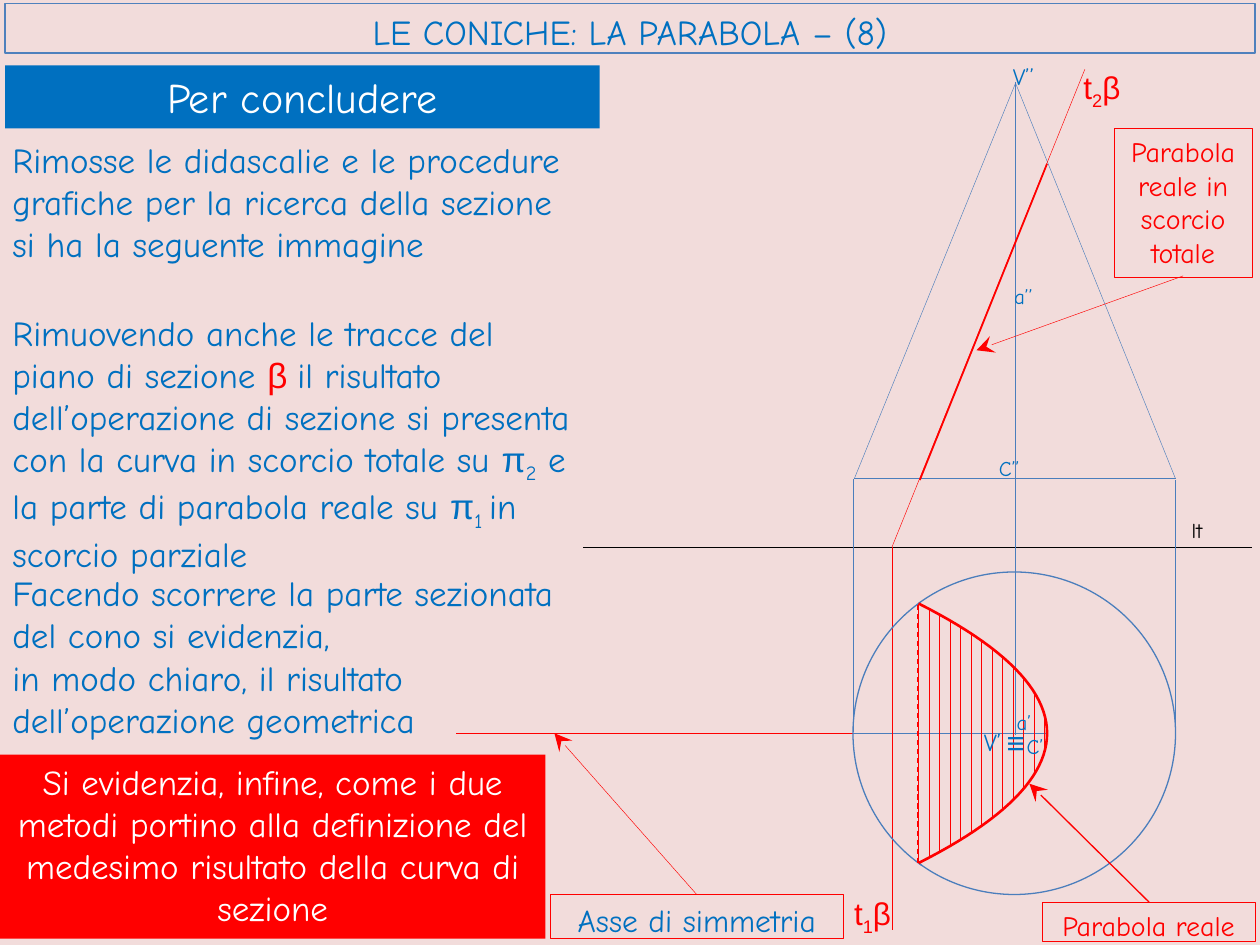
"""Build the closing slide on the parabola as a section of a cone."""
from math import sqrt

from lxml import etree
from pptx import Presentation
from pptx.dml.color import RGBColor
from pptx.enum import dml, shapes, text
from pptx.oxml import ns
from pptx.util import Inches, Pt

COLORS = {"background": "F2DCDB", "border": "4F81BD", "cone": "4B7EBC", "blue": "0070C0",
          "red": "FF0000", "black": "000000", "white": "FFFFFF"}
COMIC, ARIAL = "Comic Neue", "Arial"
APEX_X, AXIS_Y = 8.31, 5.82
CHORD_X, HALF_CHORD = 7.29, 1.03


def color(name):
    return RGBColor.from_string(COLORS[name])


def half_width(x):
    return HALF_CHORD * sqrt((APEX_X - x) / (APEX_X - CHORD_X))


def set_outline(shape, name, width):
    shape.line.color.rgb = color(name)
    shape.line.width = Pt(width)


def write(shape, paragraphs, size, align=None, anchor=text.MSO_ANCHOR.TOP):
    """Each paragraph is a list of (words, font, colour[, baseline]) runs."""
    frame = shape.text_frame
    frame.word_wrap = True
    frame.vertical_anchor = anchor
    for index, runs in enumerate(paragraphs):
        paragraph = frame.add_paragraph() if index else frame.paragraphs[0]
        paragraph.alignment = align or text.PP_ALIGN.LEFT
        for words, font, name, *baseline in runs:
            run = paragraph.add_run()
            run.text = words
            run.font.name = font
            run.font.size = Pt(size)
            run.font.color.rgb = color(name)
            if baseline:
                run.font._element.set("baseline", str(baseline[0]))


def add_text(slide, box, paragraphs, size, anchor=text.MSO_ANCHOR.TOP):
    words = slide.shapes.add_textbox(*map(Inches, box))
    write(words, paragraphs, size, anchor=anchor)
    return words


def add_label(slide, box, runs, size=12, anchor=text.MSO_ANCHOR.TOP):
    label = add_text(slide, box, [runs], size, anchor)
    label.text_frame.margin_right = 0


def add_panel(slide, box, words, size, ink, fill=None):
    panel = slide.shapes.add_shape(shapes.MSO_SHAPE.RECTANGLE, *map(Inches, box))
    panel.shadow.inherit = False
    if fill:
        panel.fill.solid()
        panel.fill.fore_color.rgb = color(fill)
        panel.line.fill.background()
    else:
        panel.fill.background()
        set_outline(panel, "red", 0.25)
    write(panel, [[(words, COMIC, ink)]], size, text.PP_ALIGN.CENTER)


def add_line(slide, start, end, name="cone", width=0.25, arrow=False, dashed=False):
    line = slide.shapes.add_connector(
        shapes.MSO_CONNECTOR.STRAIGHT, *map(Inches, (*start, *end)))
    set_outline(line, name, width)
    if dashed:
        line.line.dash_style = dml.MSO_LINE.DASH
    if arrow:
        tail = etree.SubElement(line.line._get_or_add_ln(), ns.qn("a:tailEnd"))
        tail.set("type", "stealth")
        tail.set("w", "lg")
        tail.set("len", "lg")
    etree.SubElement(line._element.spPr, ns.qn("a:effectLst"))


def add_arc(slide, box, start, end):
    arc = slide.shapes.add_shape(shapes.MSO_SHAPE.ARC, *map(Inches, box))
    arc.shadow.inherit = False
    arc.adjustments[0] = start
    arc.adjustments[1] = end
    arc.fill.background()
    set_outline(arc, "cone", 0.75)


def add_parabola(slide, steps=24):
    points = []
    for step in range(-steps, steps + 1):
        t = step / steps
        x = APEX_X - (APEX_X - CHORD_X) * t * t
        points.append((Inches(x), Inches(AXIS_Y + HALF_CHORD * t)))
    builder = slide.shapes.build_freeform(*points[0])
    builder.add_line_segments(points[1:], close=False)
    curve = builder.convert_to_shape()
    curve.shadow.inherit = False
    curve.fill.background()
    set_outline(curve, "red", 1.5)


def add_hatching(slide, count=13):
    for index in range(count):
        x = CHORD_X + index / (count - 1)
        half = half_width(x)
        add_line(slide, (x, AXIS_Y - half), (x, AXIS_Y + half), "red", 0.25 if index else 1)


def add_projections(slide):
    add_line(slide, (4.63, 4.34), (9.94, 4.34), "black")
    for start, end in (((9.33, 5.83), (9.33, 3.81)), ((6.77, 5.81), (6.77, 3.8)),
                       ((8.06, 0.66), (9.33, 3.8)), ((8.06, 0.66), (6.78, 3.8)),
                       ((8.06, 0.65), (8.06, 5.83)), ((6.77, AXIS_Y), (8.32, AXIS_Y))):
        add_line(slide, start, end)
    add_line(slide, (6.78, 3.8), (9.33, 3.8), width=0.5)
    add_line(slide, (3.62, AXIS_Y), (6.77, AXIS_Y), "red")
    add_line(slide, (8.61, 0.55), (7.08, 4.34), "red")
    add_line(slide, (7.08, 4.34), (7.08, 7.38), "red")
    add_line(slide, (8.31, 1.3), (7.3, 3.81), "red", 1)
    add_arc(slide, (6.77, 4.54, 2.56, 2.56), 140.22, 75.71)
    add_arc(slide, (6.77, 4.54, 2.56, 2.56), 75.12, 140.66)
    add_hatching(slide)
    add_line(slide, (7.28, 4.8), (7.28, 6.87), "red", 0.75, dashed=True)
    add_parabola(slide)


def add_labels(slide):
    for words, box, name in (("C’’", (7.83, 3.57, 0.52, 0.3), "blue"),
                             ("C’", (8.05, 5.77, 0.35, 0.28), "blue"),
                             ("lt", (9.36, 4.06, 0.38, 0.3), "black"),
                             ("a’’", (7.95, 2.2, 0.38, 0.3), "blue"),
                             ("a’", (7.97, 5.58, 0.38, 0.3), "blue")):
        add_label(slide, box, [(words, COMIC, name)])
    add_label(slide, (7.94, 0.44, 0.52, 0.35), [("V’’", COMIC, "blue")], 13.5)
    middle = text.MSO_ANCHOR.MIDDLE
    add_label(slide, (7.71, 5.81, 0.39, 0.16), [("V’", COMIC, "blue")], 14, middle)
    add_label(slide, (7.89, 5.81, 0.24, 0.16), [("≡", ARIAL, "blue")], 18, middle)
    for number, left, top in (("2", 8.5, 0.49), ("1", 6.68, 7.05)):
        add_label(slide, (left, top, 0.55, 0.4),
                  [("t", ARIAL, "red"), (number, ARIAL, "red", -25000), ("β", ARIAL, "red")], 18)


def add_explanation(slide):
    def plain(words):
        return words, COMIC, "blue"

    def plane(number):
        return [("π", ARIAL, "blue"), (number, COMIC, "blue", -25000)]

    add_panel(slide, (0.04, 0.52, 4.72, 0.5), "Per concludere", 24, "white", "blue")
    add_text(slide, (0, 1.05, 4.72, 1.45), [[plain(
        "Rimosse le didascalie e le procedure grafiche per la ricerca della sezione "
        "si ha la seguente immagine")]], 20)
    add_text(slide, (0, 2.42, 4.72, 2.12), [[
        plain("Rimuovendo anche le tracce del piano di sezione "), ("β ", ARIAL, "red"),
        plain("il risultato dell’operazione di sezione si presenta con la curva in "
              "scorcio totale su "), *plane("2"),
        plain(" e la parte di parabola reale su "), *plane("1 "),
        plain("in scorcio parziale")]], 20)
    add_text(slide, (0, 4.49, 4.72, 1.45), [
        [plain("Facendo scorrere la parte sezionata del cono si evidenzia,")],
        [plain("in modo chiaro, il risultato dell’operazione geometrica")]], 20)
    add_panel(slide, (0, 5.99, 4.33, 1.46),
              "Si evidenzia, infine, come i due metodi portino alla definizione del "
              "medesimo risultato della curva di sezione", 20, "white", "red")


def add_callouts(slide):
    for words, box, size, ink, start, end, width in (
            ("Asse di simmetria", (4.37, 7.1, 2.32, 0.35), 18, "blue",
             (5.53, 7.1), (4.4, 5.82), 0.25),
            ("Parabola reale in scorcio totale", (8.84, 1.02, 1.1, 1.18), 16, "red",
             (9.39, 2.19), (7.75, 2.78), 0.25),
            ("Parabola reale", (8.27, 7.16, 1.69, 0.31), 16, "red",
             (9.12, 7.16), (8.17, 6.22), 0.75)):
        add_panel(slide, box, words, size, ink)
        add_line(slide, start, end, "red", width, arrow=True)


def add_title(slide):
    title = slide.shapes.title
    title.left, title.top, title.width, title.height = map(Inches, (0.04, 0.03, 9.92, 0.39))
    set_outline(title, "border", 0.75)
    write(title, [[("LE CONICHE: LA PARABOLA – (8)", COMIC, "blue")]], 20, text.PP_ALIGN.CENTER)
    title.text_frame.auto_size = text.MSO_AUTO_SIZE.NONE


def main():
    deck = Presentation()
    deck.slide_width, deck.slide_height = Inches(10), Inches(7.5)
    slide = deck.slides.add_slide(deck.slide_layouts[5])
    slide.background.fill.solid()
    slide.background.fill.fore_color.rgb = color("background")
    add_title(slide)
    add_projections(slide)
    add_labels(slide)
    add_explanation(slide)
    add_callouts(slide)
    deck.save("out.pptx")


if __name__ == "__main__":
    main()
